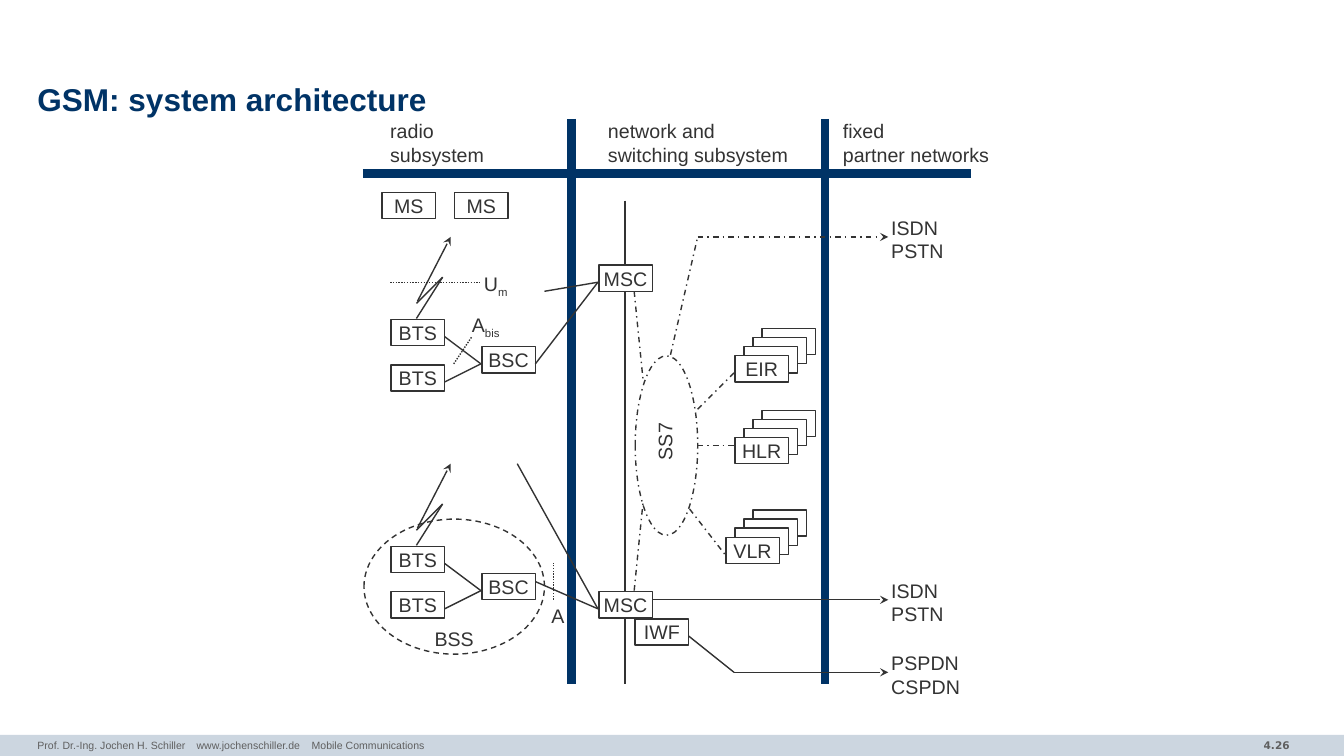
from lxml import etree
from pptx import Presentation
from pptx.dml.color import RGBColor
from pptx.enum.dml import MSO_LINE
from pptx.enum.shapes import MSO_CONNECTOR, MSO_SHAPE
from pptx.enum.text import MSO_ANCHOR, MSO_AUTO_SIZE, PP_ALIGN
from pptx.oxml.ns import qn
from pptx.util import Inches, Pt

NAVY = RGBColor(0x00, 0x33, 0x66)
INK = RGBColor(0x33, 0x33, 0x33)
GREY = RGBColor(0x5F, 0x5F, 0x5F)
BAR = RGBColor(0xCC, 0xD6, 0xE0)
WHITE = RGBColor(0xFF, 0xFF, 0xFF)
NODE_WIDTH, NODE_HEIGHT = 0.53, 0.26


def place(origin, left, top):
    """Return the slide position of an offset from a region's corner."""
    return Inches(origin[0] + left), Inches(origin[1] + top)


def style(paragraph, size, color, font="Arial", bold=False):
    """Format every run of a paragraph."""
    for run in paragraph.runs:
        run.font.name, run.font.size, run.font.bold = font, Pt(size), bold
        run.font.color.rgb = color


def set_margins(frame, horizontal, vertical):
    """Set the four insets of a text frame."""
    frame.margin_left = frame.margin_right = Inches(horizontal)
    frame.margin_top = frame.margin_bottom = Inches(vertical)


def link(slide, origin, start, end, color=INK, width=1, dash=None, arrow=False):
    """Draw a straight line between two offsets."""
    line = slide.shapes.add_connector(
        MSO_CONNECTOR.STRAIGHT, *place(origin, *start), *place(origin, *end))
    line.line.color.rgb = color
    line.line.width = Pt(width)
    if dash:
        line.line.dash_style = dash
    properties = line._element.spPr
    if arrow:
        etree.SubElement(properties.find(qn("a:ln")), qn("a:tailEnd"), type="stealth")
    etree.SubElement(properties, qn("a:effectLst"))


def outline(slide, origin, kind, left, top, width, height, dash=None, fill=None):
    """Draw a thin outlined shape."""
    shape = slide.shapes.add_shape(
        kind, *place(origin, left, top), Inches(width), Inches(height))
    shape.shadow.inherit = False
    if fill is None:
        shape.fill.background()
    else:
        shape.fill.solid()
        shape.fill.fore_color.rgb = fill
    shape.line.color.rgb = INK
    shape.line.width = Pt(1)
    if dash:
        shape.line.dash_style = dash
    return shape


def node(slide, origin, left, top, name="", fill=None):
    """Draw a network element as a small named box."""
    box = outline(slide, origin, MSO_SHAPE.RECTANGLE, left, top,
                  NODE_WIDTH, NODE_HEIGHT, fill=fill)
    if name:
        frame = box.text_frame
        frame.text = name
        frame.word_wrap = False
        frame.vertical_anchor = MSO_ANCHOR.MIDDLE
        frame.paragraphs[0].alignment = PP_ALIGN.CENTER
        style(frame.paragraphs[0], 14, INK)


def label(slide, origin, left, top, width, height, words, subscript=""):
    """Write a free label, with an optional subscript."""
    box = slide.shapes.add_textbox(
        *place(origin, left, top), Inches(width), Inches(height))
    frame = box.text_frame
    frame.word_wrap = True
    frame.auto_size = MSO_AUTO_SIZE.SHAPE_TO_FIT_TEXT
    set_margins(frame, 0.11, 0.06)
    paragraph = frame.paragraphs[0]
    paragraph.text = words
    if subscript:
        index = paragraph.add_run()
        index.text = subscript
        index._r.get_or_add_rPr().set("baseline", "-25000")
    style(paragraph, 14, INK)
    return box


def add_title(slide, left, top, width, height):
    """Place and format the title."""
    title = slide.shapes.title
    title.left, title.top = Inches(left), Inches(top)
    title.width, title.height = Inches(width), Inches(height)
    frame = title.text_frame
    frame.text = "GSM: system architecture"
    frame.auto_size = MSO_AUTO_SIZE.NONE
    frame.vertical_anchor = MSO_ANCHOR.MIDDLE
    set_margins(frame, 0, 0)
    paragraph = frame.paragraphs[0]
    paragraph.alignment = PP_ALIGN.LEFT
    paragraph.line_spacing = 0.85
    style(paragraph, 22.5, NAVY, bold=True)


def add_footer(slide, left, top, width, height):
    """Draw the footer bar with the credits and the page number."""
    bar = slide.shapes.add_shape(
        MSO_SHAPE.RECTANGLE, Inches(left), Inches(top), Inches(width), Inches(height))
    bar.shadow.inherit = False
    bar.fill.solid()
    bar.fill.fore_color.rgb = BAR
    bar.line.fill.background()
    origin = (left, top)
    credits = slide.shapes.add_textbox(
        *place(origin, 0.37, -0.01), Inches(8.72), Inches(0.22)).text_frame
    credits.word_wrap = True
    set_margins(credits, 0, 0.05)
    paragraph = credits.paragraphs[0]
    paragraph.text = ("Prof. Dr.-Ing. Jochen H. Schiller\t"
                      "www.jochenschiller.de\tMobile Communications")
    stops = etree.SubElement(paragraph._p.get_or_add_pPr(), qn("a:tabLst"))
    for stop in (1.58, 2.72):
        etree.SubElement(stops, qn("a:tab"), pos=str(Inches(stop)), algn="l")
    style(paragraph, 7.5, GREY)
    page = slide.shapes.add_textbox(
        *place(origin, 11.1, -0.01), Inches(1.79), Inches(0.23)).text_frame
    page.word_wrap = True
    page.text = "4.26"
    page.paragraphs[0].alignment = PP_ALIGN.RIGHT
    style(page.paragraphs[0], 7.5, GREY, "DejaVu Sans", True)


def add_frame(slide, origin):
    """Draw the thick rules that divide the three subsystems."""
    for start, end in (((2.07, 0), (2.07, 5.61)), ((4.58, 0), (4.58, 5.61)),
                       ((0, 0.54), (6.03, 0.54))):
        link(slide, origin, start, end, NAVY, 6)


def add_base_station(slide, origin):
    """Draw two BTS under one BSC, with the radio link above."""
    link(slide, origin, (0.25, 0.81), (0.51, 0.4))
    link(slide, origin, (0.51, 0.4), (0.25, 0.66))
    link(slide, origin, (0.26, 0.64), (0.59, 0), arrow=True)
    for top in (0.82, 1.27):
        node(slide, origin, 0, top, "BTS")
        link(slide, origin, (NODE_WIDTH, top + 0.17), (0.89, 1.26))
    node(slide, origin, 0.9, 1.09, "BSC")


def add_radio_subsystem(slide, origin):
    """Draw the mobile and base stations with their interfaces."""
    label(slide, origin, 0.16, 0, 1.41, 0.58, "radio\vsubsystem")
    for left in (0.19, 0.91):
        node(slide, origin, left, 0.79, "MS")
    outline(slide, origin, MSO_SHAPE.OVAL, 0.01, 4.03, 1.79, 1.34, MSO_LINE.DASH)
    for top in (1.23, 3.48):
        add_base_station(slide, (origin[0] + 0.28, origin[1] + top))
    for start, end in (((0.27, 1.68), (1.17, 1.68)), ((0.9, 2.49), (1.08, 2.22)),
                       ((1.89, 4.83), (1.89, 4.47))):
        link(slide, origin, start, end, dash=MSO_LINE.ROUND_DOT)
    for start, end in (((1.71, 2.49), (2.33, 1.68)), ((1.8, 1.77), (2.33, 1.68)),
                       ((1.71, 4.65), (2.33, 4.92)), ((1.53, 3.48), (2.33, 4.92))):
        link(slide, origin, start, end)
    label(slide, origin, 1.09, 1.52, 0.7, 0.35, "U", "m")
    label(slide, origin, 0.97, 1.92, 0.7, 0.35, "A", "bis")
    label(slide, origin, 1.76, 4.81, 0.39, 0.35, "A")
    label(slide, origin, 0.6, 5.04, 0.63, 0.35, "BSS")


def add_switching_subsystem(slide, origin):
    """Draw the switching centres, the SS7 network and the registers."""
    label(slide, origin, 0.08, 0, 2.08, 0.58, "network and switching subsystem")
    for left, top, name in ((0.1, 1.51, "MSC"), (0.1, 4.75, "MSC"), (0.46, 5.02, "IWF")):
        node(slide, origin, left, top, name)
    for top, bottom in ((0.87, 1.5), (1.77, 4.74), (5.01, 5.67)):
        link(slide, origin, (0.36, top), (0.36, bottom))
    link(slide, origin, (0.99, 5.19), (1.44, 5.55))
    outline(slide, origin, MSO_SHAPE.OVAL, 0.46, 2.41, 0.62, 1.78, MSO_LINE.DASH_DOT)
    label(slide, origin, 0.39, 3.02, 0.72, 0.35, "SS7").rotation = 270
    for left, top, name in ((1.45, 2.41, "EIR"), (1.45, 3.22, "HLR"), (1.36, 4.21, "VLR")):
        for depth in (3, 2, 1, 0):
            node(slide, origin, left + 0.09 * depth, top - 0.09 * depth,
                 "" if depth else name, WHITE)
    for start, end in (((0.45, 1.77), (0.54, 2.67)), ((0.45, 4.74), (0.54, 3.84)),
                       ((1.08, 2.94), (1.44, 2.58)), ((1.08, 3.3), (1.44, 3.3)),
                       ((1, 3.93), (1.35, 4.38)), ((0.81, 2.4), (1.08, 1.23))):
        link(slide, origin, start, end, dash=MSO_LINE.DASH_DOT)


def add_partner_networks(slide, origin):
    """Draw the fixed networks and the arrows that reach them."""
    label(slide, origin, 0, 0, 1.77, 0.58, "fixed\vpartner networks")
    for top, start, names, dash in ((1.23, -1.33, "ISDN\vPSTN", MSO_LINE.DASH_DOT),
                                    (4.83, -1.78, "ISDN\vPSTN", None),
                                    (5.55, -0.97, "PSPDN\vCSPDN", None)):
        link(slide, origin, (start, top), (0.56, top), dash=dash, arrow=True)
        label(slide, origin, 0.48, top - 0.27, 0.97, 0.58, names)


def main():
    """Build and save the slide."""
    deck = Presentation()
    deck.slide_width, deck.slide_height = Inches(13.33), Inches(7.5)
    slide = deck.slides.add_slide(deck.slide_layouts[5])
    add_footer(slide, 0, 7.29, 13.33, 0.21)
    add_title(slide, 0.37, 0.78, 12.6, 0.47)
    add_frame(slide, (3.6, 1.18))
    add_radio_subsystem(slide, (3.6, 1.12))
    add_switching_subsystem(slide, (5.84, 1.12))
    add_partner_networks(slide, (8.25, 1.12))
    deck.save("out.pptx")


if __name__ == "__main__":
    main()
